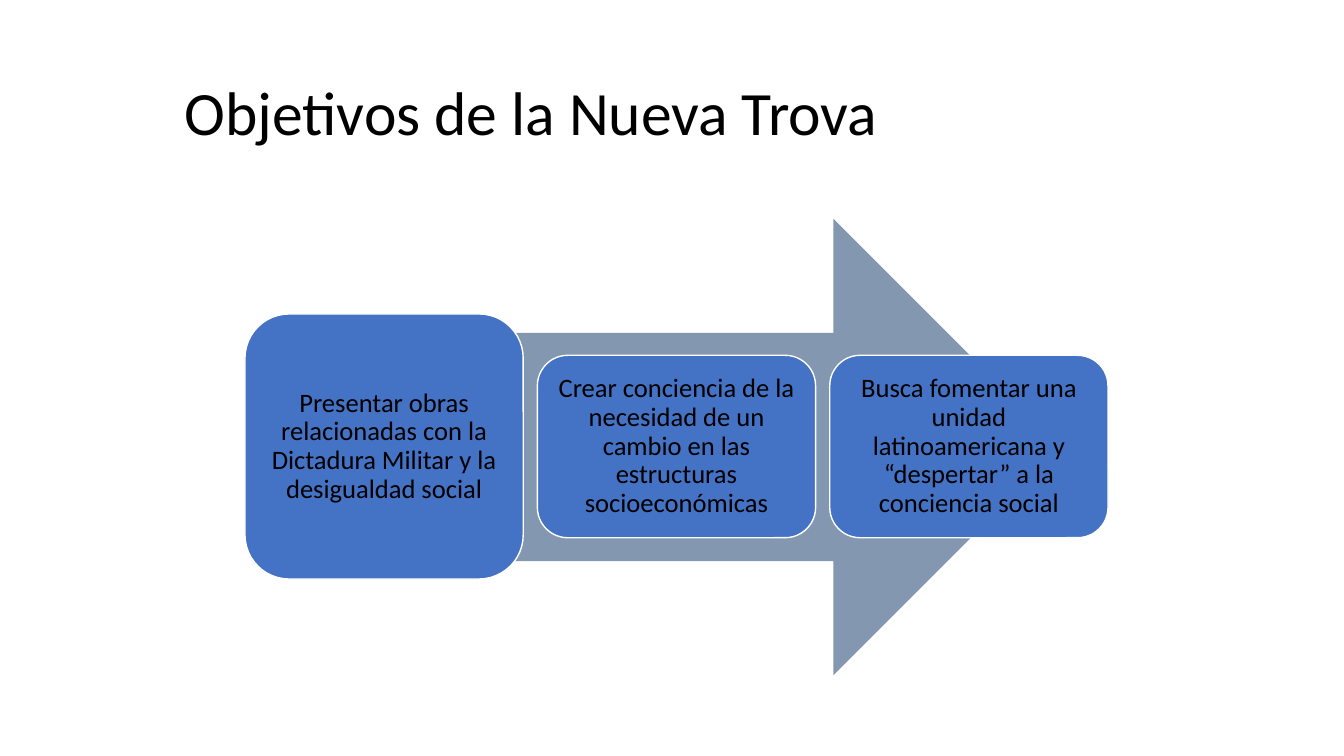
from pptx import Presentation
from pptx.dml.color import RGBColor
from pptx.enum.shapes import MSO_SHAPE
from pptx.enum.text import MSO_ANCHOR, PP_ALIGN
from pptx.util import Inches, Pt

BLACK = RGBColor(0x00, 0x00, 0x00)
WHITE = RGBColor(0xFF, 0xFF, 0xFF)
BLUE = RGBColor(0x44, 0x72, 0xC4)
SLATE = RGBColor(0x84, 0x97, 0xB0)

GOALS = [
    ("Presentar obras relacionadas con la Dictadura Militar y la desigualdad social", 2.63),
    ("Crear conciencia de la necesidad de un cambio en las estructuras socioeconómicas", 1.81),
    ("Busca fomentar una unidad latinoamericana y “despertar” a la conciencia social", 1.81),
]
LEFT, WIDTH, STEP, MIDDLE = 2.43, 2.76, 2.9, 4.43


class Painter:
    """Draws styled elements on one slide."""

    font = "Calibri"

    def __init__(self, slide):
        self.slide = slide

    def label(self, frame, text, size, align, pad):
        frame.word_wrap = True
        frame.vertical_anchor = MSO_ANCHOR.MIDDLE
        frame.margin_left = frame.margin_right = Inches(pad)
        frame.margin_top = frame.margin_bottom = Inches(0.08)
        para = frame.paragraphs[0]
        para.alignment = align
        para.line_spacing = 0.9
        run = para.add_run()
        run.text = text
        run.font.name = self.font
        run.font.size = Pt(size)
        run.font.color.rgb = BLACK

    def title(self, text, *area):
        box = self.slide.shapes.add_textbox(*map(Inches, area))
        self.label(box.text_frame, text, 44, PP_ALIGN.LEFT, 0.1)

    def shape(self, kind, fill, *area):
        shape = self.slide.shapes.add_shape(kind, *map(Inches, area))
        shape.shadow.inherit = False
        shape.fill.solid()
        shape.fill.fore_color.rgb = fill
        shape.line.fill.background()
        return shape

    def arrow(self, *area):
        self.shape(MSO_SHAPE.RIGHT_ARROW, SLATE, *area)

    def card(self, text, *area):
        card = self.shape(MSO_SHAPE.ROUNDED_RECTANGLE, BLUE, *area)
        card.line.color.rgb = WHITE
        card.line.width = Pt(1)
        self.label(card.text_frame, text, 19, PP_ALIGN.CENTER, 0.08)


def main():
    deck = Presentation()
    deck.slide_width = Inches(13.33)
    deck.slide_height = Inches(7.5)
    paint = Painter(deck.slides.add_slide(deck.slide_layouts[6]))
    paint.title("Objetivos de la Nueva Trova", 1.73, 0.42, 11.5, 1.45)
    paint.arrow(2.89, 2.17, 7.64, 4.53)
    for index, (goal, height) in enumerate(GOALS):
        paint.card(goal, LEFT + index * STEP, MIDDLE - height / 2, WIDTH, height)
    deck.save("out.pptx")


if __name__ == "__main__":
    main()
